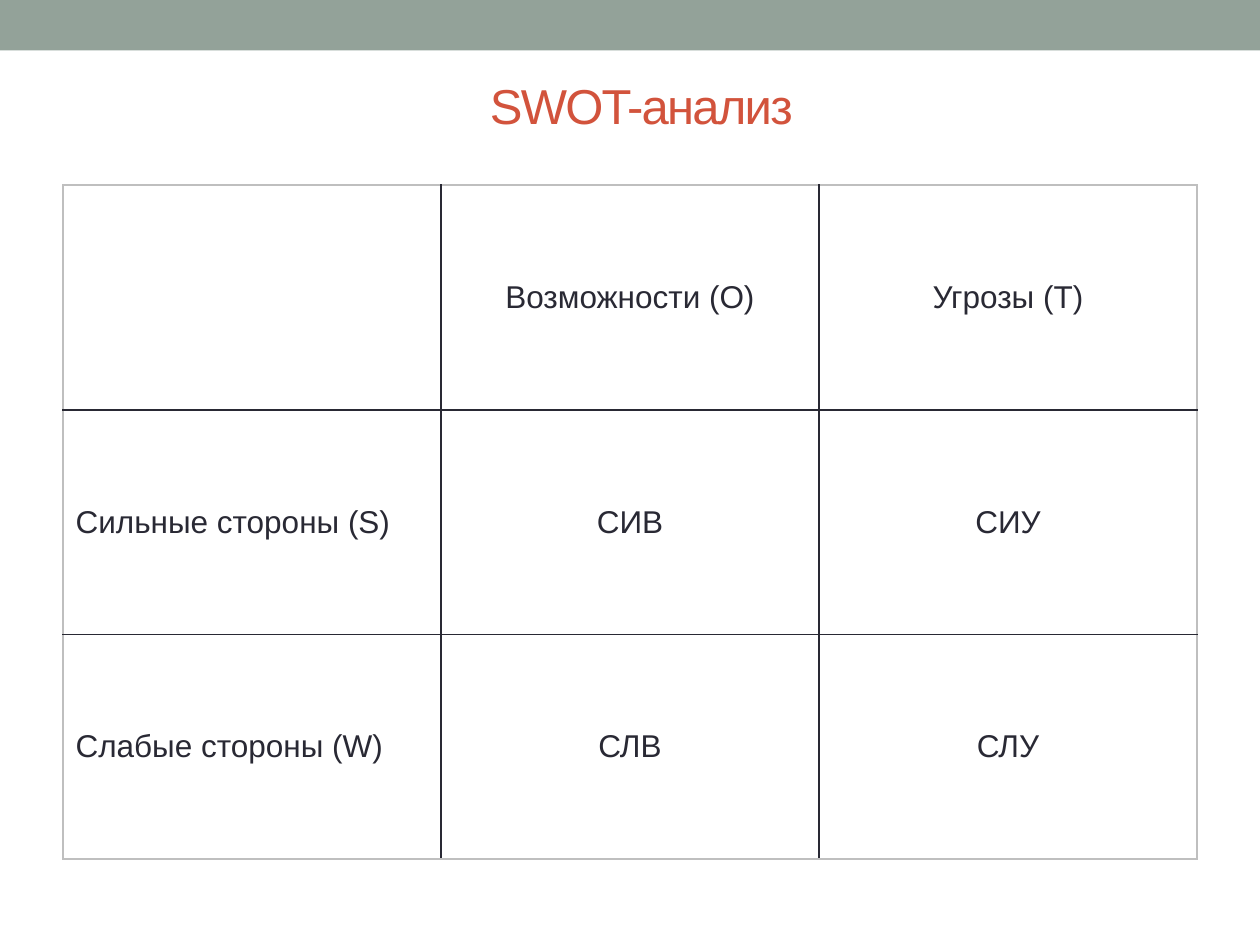
import pptx
import pptx.util
import pptx.dml.color
import pptx.enum.text
import pptx.enum.shapes
import pptx.oxml
import pptx.oxml.ns

HUES = {"band": "93A299", "title": "D2533C", "ink": "292934", "edge": "BFBFBF"}
FONT = "Arial"
ROWS = [
    ["", "Возможности (O)", "Угрозы (T)"],
    ["Сильные стороны (S)", "СИВ", "СИУ"],
    ["Слабые стороны (W)", "СЛВ", "СЛУ"],
]
ALIGN = pptx.enum.text.PP_ALIGN
MID = pptx.enum.text.MSO_ANCHOR.MIDDLE


def color(name):
    return pptx.dml.color.RGBColor.from_string(HUES[name])


def place(shape, box):
    shape.left, shape.top, shape.width, shape.height = box


def style(para, size, hue, align):
    para.alignment = align
    for run in para.runs:
        run.font.size = pptx.util.Pt(size)
        run.font.name = FONT
        run.font.color.rgb = color(hue)


def border(cell, sides):
    props = cell._tc.get_or_add_tcPr()
    for spot, (side, hue) in enumerate(sides.items()):
        line = pptx.oxml.parse_xml(
            f'<a:{side} {pptx.oxml.ns.nsdecls("a")} w="12700"><a:solidFill>'
            f'<a:srgbClr val="{HUES[hue]}"/></a:solidFill></a:{side}>'
        )
        props.insert(spot, line)


def add_band(slide, box):
    band = slide.shapes.add_shape(pptx.enum.shapes.MSO_SHAPE.RECTANGLE, *box)
    band.shadow.inherit = False
    band.fill.solid()
    band.fill.fore_color.rgb = color("band")
    band.line.fill.background()


def add_title(slide, box):
    title = slide.shapes.title
    place(title, box)
    frame = title.text_frame
    frame.text = "SWOT-анализ"
    frame.vertical_anchor = MID
    para = frame.paragraphs[0]
    style(para, 28, "title", ALIGN.CENTER)
    para.runs[0].font._element.set("spc", "-100")


def add_grid(slide, box):
    count, wide = len(ROWS), len(ROWS[0])
    table = slide.shapes.add_table(count, wide, *box).table
    table.first_row = table.horz_banding = False
    for row, texts in enumerate(ROWS):
        for col, text in enumerate(texts):
            cell = table.cell(row, col)
            cell.text_frame.text = text
            cell.vertical_anchor = MID
            cell.fill.background()
            align = ALIGN.CENTER if col else ALIGN.LEFT
            style(cell.text_frame.paragraphs[0], 18, "ink", align)
            outer = {
                "lnL": col == 0,
                "lnR": col == wide - 1,
                "lnT": row == 0,
                "lnB": row == count - 1,
            }
            border(cell, {side: "edge" if out else "ink" for side, out in outer.items()})


def main():
    deck = pptx.Presentation()
    deck.slide_width = pptx.util.Inches(10)
    deck.slide_height = pptx.util.Inches(7.5)
    slide = deck.slides.add_slide(deck.slide_layouts[5])

    def area(*lengths):
        return [pptx.util.Inches(length) for length in lengths]

    add_band(slide, area(0, 0, 10, 0.4))
    add_title(slide, area(0.59, 0.29, 9, 1.08))
    add_grid(slide, area(0.5, 1.47, 9, 5.35))
    deck.save("out.pptx")


if __name__ == "__main__":
    main()
